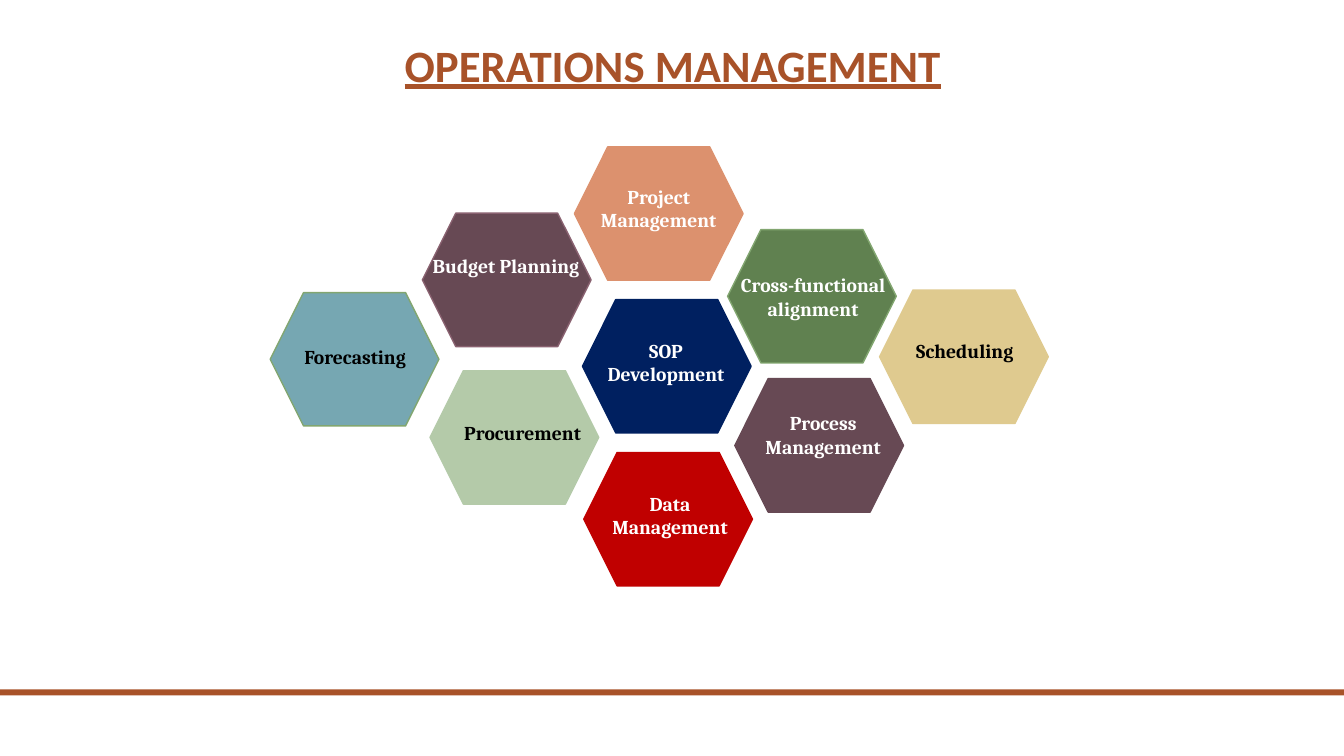
from pptx import Presentation
from pptx.dml.color import RGBColor
from pptx.enum.shapes import MSO_SHAPE
from pptx.enum.text import MSO_ANCHOR, PP_ALIGN
from pptx.util import Pt

HEXAGON, RECTANGLE = MSO_SHAPE.HEXAGON, MSO_SHAPE.RECTANGLE
LEFT, CENTER = PP_ALIGN.LEFT, PP_ALIGN.CENTER
BOTTOM = MSO_ANCHOR.BOTTOM

RUST = RGBColor(0xA8, 0x52, 0x29)
TEAL = RGBColor(0x76, 0xA7, 0xB2)
PLUM = RGBColor(0x67, 0x49, 0x54)
MAUVE = RGBColor(0x89, 0x61, 0x70)
SAGE = RGBColor(0xB4, 0xCA, 0xA9)
CORAL = RGBColor(0xDC, 0x91, 0x6E)
SAND = RGBColor(0xDF, 0xCA, 0x8F)
NAVY = RGBColor(0x00, 0x20, 0x60)
GREEN = RGBColor(0x60, 0x81, 0x50)
LIGHT_GREEN = RGBColor(0x82, 0xA6, 0x70)
RED = RGBColor(0xC0, 0x00, 0x00)
BLACK = RGBColor(0x00, 0x00, 0x00)
WHITE = RGBColor(0xFF, 0xFF, 0xFF)

HEX_WIDTH, HEX_HEIGHT = 120.5, 95.3

prs = Presentation()
prs.slide_width, prs.slide_height = Pt(960), Pt(540)
slide = prs.slides.add_slide(prs.slide_layouts[6])


def add_filled(preset, left, top, width, height, fill):
    shape = slide.shapes.add_shape(preset, Pt(left), Pt(top), Pt(width), Pt(height))
    shape.shadow.inherit = False
    shape.fill.solid()
    shape.fill.fore_color.rgb = fill
    shape.line.fill.background()
    return shape


def add_text(text, left, top, width, height, font_name, size, color, align):
    box = slide.shapes.add_textbox(Pt(left), Pt(top), Pt(width), Pt(height))
    box.text_frame.word_wrap = True
    box.text_frame.text = text
    for paragraph in box.text_frame.paragraphs:
        paragraph.alignment = align
        for run in paragraph.runs:
            run.font.name = font_name
            run.font.size = Pt(size)
            run.font.bold = True
            run.font.color.rgb = color
    return box.text_frame


# Footer bar
add_filled(RECTANGLE, 0, 492.5, 960, 4.3, RUST)

# Title
title = add_text("OPERATIONS MANAGEMENT", 36.7, -0.7, 887.8, 69.8,
                 "Calibri", 32, RUST, CENTER)
title.vertical_anchor = BOTTOM
title.paragraphs[0].line_spacing = 0.9
title.paragraphs[0].runs[0].font.underline = True

# Honeycomb: label, hexagon left and top, fill, outline,
# label offset from the hexagon, label height, colour and alignment
cells = [
    ("Forecasting", 193, 209, TEAL, LIGHT_GREEN, 17.3, 33.6, 24.2, BLACK, LEFT),
    ("Budget Planning", 301.7, 152.3, PLUM, MAUVE, -0.5, 25.5, 41.2, WHITE, CENTER),
    ("Procurement", 307.2, 264.8, SAGE, SAGE, 17.3, 32.5, 24.2, BLACK, LEFT),
    ("Project\nManagement", 410.3, 104.9, CORAL, CORAL, 0, 23.3, 41.2, WHITE, CENTER),
    ("Scheduling", 628.3, 207.2, SAND, SAND, 19, 31.7, 24.2, BLACK, LEFT),
    ("SOP Development", 416, 214, NAVY, NAVY, -0.5, 24.4, 41.2, WHITE, CENTER),
    ("Cross-functional alignment", 519.7, 164, GREEN, LIGHT_GREEN,
     0.9, 27.4, 41.2, WHITE, CENTER),
    ("Data Management", 417, 323.2, RED, RED, 1.4, 24.5, 41.2, WHITE, CENTER),
    ("Process\nManagement", 524.9, 270.5, PLUM, PLUM, 2.9, 19.6, 41.2, WHITE, CENTER),
]

for _, left, top, fill, outline, *_ in cells:
    hexagon = add_filled(HEXAGON, left, top, HEX_WIDTH, HEX_HEIGHT, fill)
    hexagon.line.color.rgb = outline
    hexagon.line.width = Pt(1)

# Labels lie above all hexagons
for label, left, top, _, _, dx, dy, height, color, align in cells:
    add_text(label, left + dx, top + dy, HEX_WIDTH, height,
             "Cambria", 14, color, align)

prs.save("out.pptx")
